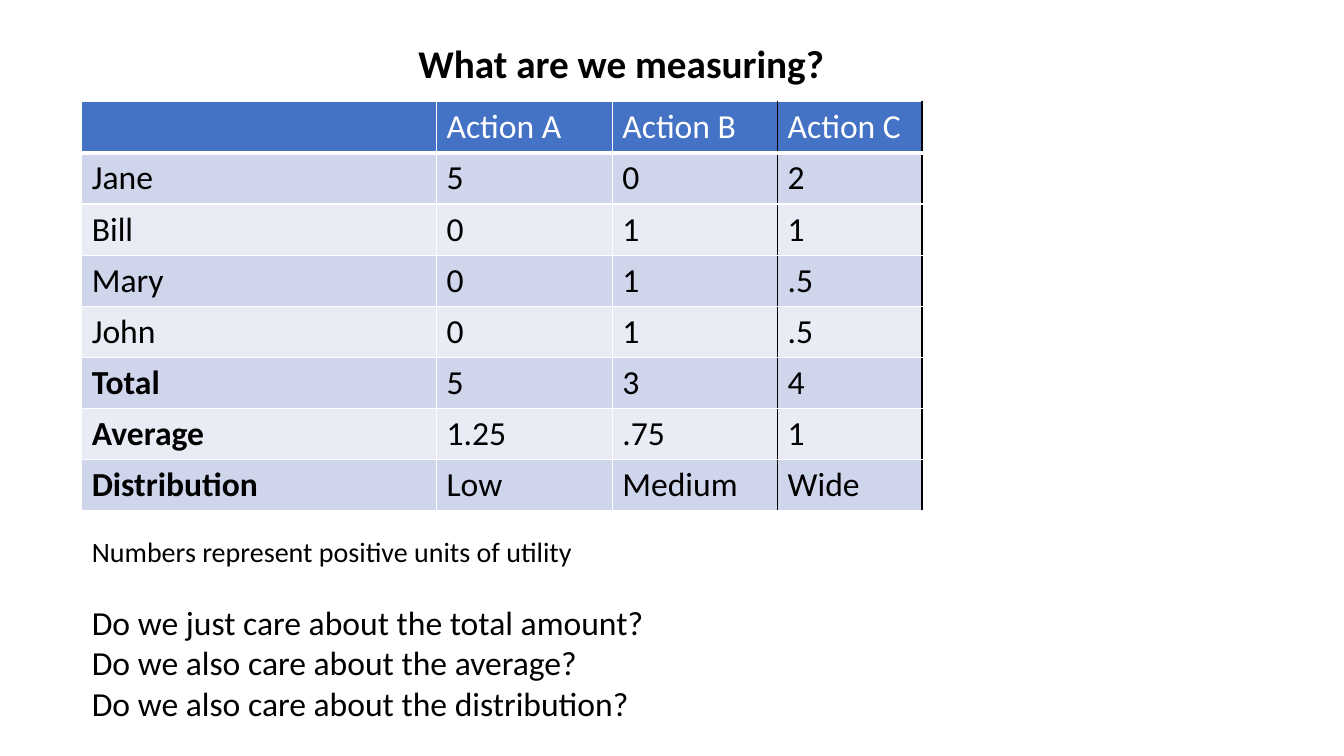
from lxml import etree
from pptx import Presentation
from pptx.dml.color import RGBColor
from pptx.enum.text import MSO_ANCHOR, MSO_AUTO_SIZE, PP_ALIGN
from pptx.oxml.ns import qn
from pptx.util import Inches, Pt

MIDDLE, TOP = MSO_ANCHOR.MIDDLE, MSO_ANCHOR.TOP
CENTER, LEFT = PP_ALIGN.CENTER, PP_ALIGN.LEFT
NO_FIT = MSO_AUTO_SIZE.NONE

MARGIN = 6.08
BLACK, WHITE, BLUE = "000000", "FFFFFF", "4472C4"
BANDS = ("CFD5EA", "E9EBF5")

UTILITIES = [
    ("", "Action A", "Action B", "Action C"),
    ("Jane", "5", "0", "2"),
    ("Bill", "0", "1", "1"),
    ("Mary", "0", "1", ".5"),
    ("John", "0", "1", ".5"),
    ("Total", "5", "3", "4"),
    ("Average", "1.25", ".75", "1"),
    ("Distribution", "Low", "Medium", "Wide"),
]
SUMMARY_ROW = 5
ACTION_C = 3
NOTE = "Numbers represent positive units of utility"
QUESTIONS = [
    "Do we just care about the total amount?",
    "Do we also care about the average?",
    "Do we also care about the distribution?",
]


def color(value):
    return RGBColor.from_string(value)


class SlideBuilder:
    font_name = "Calibri"

    def __init__(self, presentation):
        self.width = presentation.slide_width
        self.height = presentation.slide_height
        self.slide = presentation.slides.add_slide(presentation.slide_layouts[1])

    def x(self, percent):
        return round(self.width * percent / 100)

    def y(self, percent):
        return round(self.height * percent / 100)

    def place(self, placeholder, left, top, width, height, anchor):
        placeholder.left, placeholder.top = self.x(left), self.y(top)
        placeholder.width, placeholder.height = self.x(width), self.y(height)
        frame = placeholder.text_frame
        frame.word_wrap = True
        frame.auto_size = NO_FIT
        frame.vertical_anchor = anchor
        return frame

    def style(self, paragraph, size, ink=BLACK, bold=False):
        font = paragraph.font
        font.name, font.size, font.bold = self.font_name, Pt(size), bold
        font.color.rgb = color(ink)

    def title(self, heading, *box):
        frame = self.place(self.slide.shapes.title, *box, MIDDLE)
        frame.text = heading
        paragraph = frame.paragraphs[0]
        paragraph.alignment = CENTER
        paragraph.line_spacing = 0.9
        self.style(paragraph, 28, bold=True)

    def body(self, lines, *box):
        frame = self.place(self.slide.placeholders[1], *box, TOP)
        frame.text = "\n".join(text for text, size, gap in lines)
        for paragraph, (text, size, gap) in zip(frame.paragraphs, lines):
            paragraph.alignment = LEFT
            paragraph.line_spacing = 1.0
            paragraph.space_before = Pt(gap)
            paragraph.space_after = Pt(0)
            self.style(paragraph, size)
            properties = paragraph._p.get_or_add_pPr()
            properties.set("marL", "0")
            properties.set("indent", "0")
            properties.insert_element_before(
                properties.makeelement(qn("a:buNone")), "a:tabLst", "a:defRPr", "a:extLst")

    def borders(self, cell, **sides):
        properties = cell._tc.get_or_add_tcPr()
        for side in "LRTB":
            ink, points = sides.get(side, (WHITE, 1))
            line = etree.SubElement(properties, qn(f"a:ln{side}"), w=str(Pt(points)))
            fill = etree.SubElement(line, qn("a:solidFill"))
            etree.SubElement(fill, qn("a:srgbClr"), val=ink)

    def table(self, rows, left, top, column_widths, row_height):
        grid = self.slide.shapes.add_table(
            len(rows), len(column_widths), self.x(left), self.y(top),
            self.x(sum(column_widths)), self.y(row_height * len(rows))).table
        for column, width in zip(grid.columns, column_widths):
            column.width = self.x(width)
        for r, values in enumerate(rows):
            grid.rows[r].height = self.y(row_height)
            for c, value in enumerate(values):
                header = r == 0
                cell = grid.cell(r, c)
                cell.text = value
                self.style(cell.text_frame.paragraphs[0], 24, WHITE if header else BLACK,
                           bold=c == 0 and r >= SUMMARY_ROW)
                self.borders(cell,
                             L=(BLACK if c == ACTION_C else WHITE, 1),
                             R=(BLACK if c >= ACTION_C - 1 else WHITE, 1),
                             B=(WHITE, 3 if header else 1))
                cell.fill.solid()
                cell.fill.fore_color.rgb = color(BLUE if header else BANDS[(r - 1) % 2])


def main():
    presentation = Presentation()
    presentation.slide_width, presentation.slide_height = Inches(13.33), Inches(7.5)
    builder = SlideBuilder(presentation)
    builder.title("What are we measuring?", MARGIN, 4, 80.27, 9.47)
    builder.table(UTILITIES, MARGIN, 13.47, (26.4, 13.08, 12.3, 10.75), 6.76)
    questions = [(question, 24, 0 if i else 24.4) for i, question in enumerate(QUESTIONS)]
    builder.body([(NOTE, 20, 0)] + questions, MARGIN, 70, 81.55, 26.53)
    presentation.save("out.pptx")


if __name__ == "__main__":
    main()
